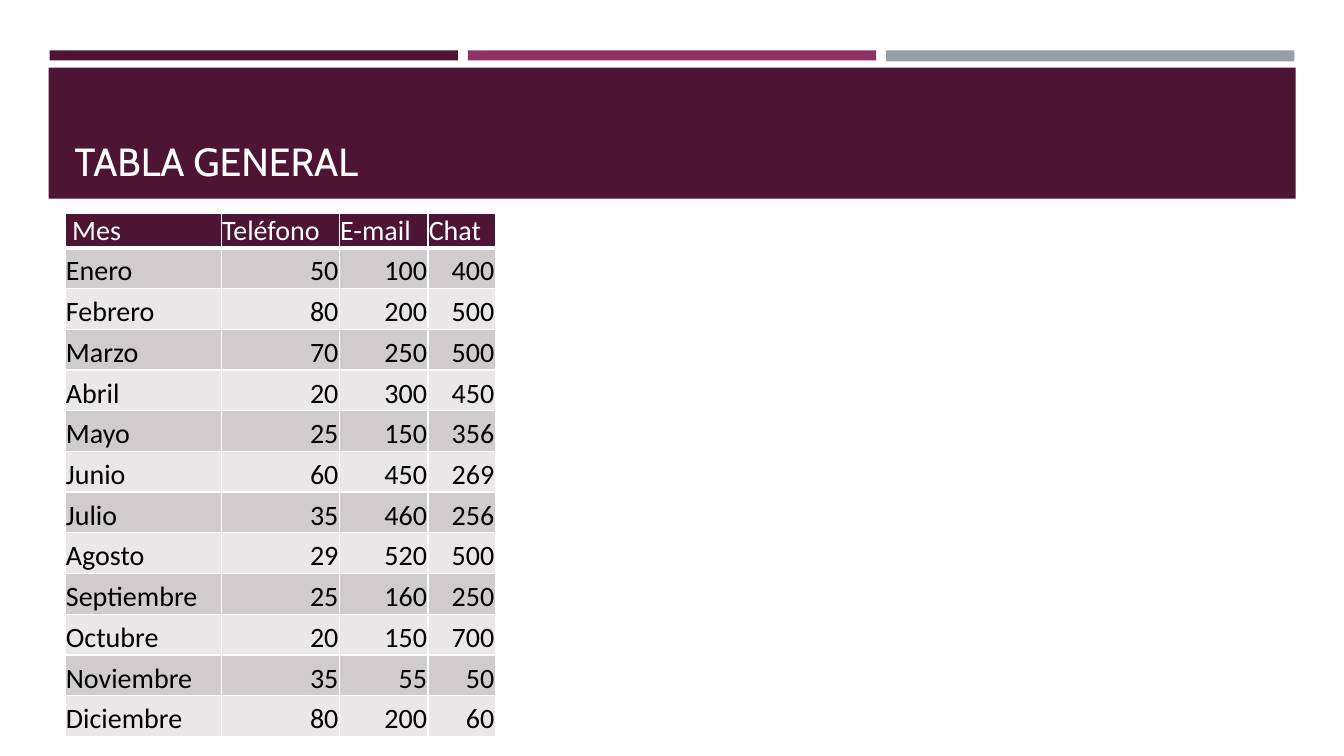
from dataclasses import dataclass
from typing import Any

from lxml import etree
from pptx import Presentation, util as u
from pptx.dml.color import RGBColor
from pptx.enum import shapes, text
from pptx.oxml import ns

EMU_PER_PX = 3810


@dataclass(frozen=True)
class Theme:
    plum: str = "4D1434"
    magenta: str = "903163"
    grey: str = "969FA7"
    odd_row: str = "D0CCCE"
    even_row: str = "E9E7E8"
    white: str = "FFFFFF"
    black: str = "000000"
    title_font: str = "Cabin"
    table_font: str = "Calibri"
    title_size: int = 28
    table_size: int = 20
    thin_border: int = 1
    thick_border: int = 3


@dataclass(frozen=True)
class Block:
    left: int
    top: int
    width: int
    height: int
    color: str


THEME = Theme()
BAR_LEFT, BAR_STEP = 118, 996
BARS = [
    Block(BAR_LEFT + i * BAR_STEP, 120, 972, height, color)
    for i, (color, height) in enumerate(
        [(THEME.plum, 24), (THEME.magenta, 24), (THEME.grey, 26)]
    )
]
TITLE_BAND = Block(116, 161, 2969, 312, THEME.plum)

TABLE_LEFT, TABLE_TOP = 155, 507
HEADER_HEIGHT, MONTH_HEIGHT = 83, 97
COLUMN_WIDTHS = [372, 281, 211, 160]
CONTACTS = [
    (" Mes", "Teléfono", "E-mail", "Chat"),
    ("Enero", 50, 100, 400),
    ("Febrero", 80, 200, 500),
    ("Marzo", 70, 250, 500),
    ("Abril", 20, 300, 450),
    ("Mayo", 25, 150, 356),
    ("Junio", 60, 450, 269),
    ("Julio", 35, 460, 256),
    ("Agosto", 29, 520, 500),
    ("Septiembre", 25, 160, 250),
    ("Octubre", 20, 150, 700),
    ("Noviembre", 35, 55, 50),
    ("Diciembre", 80, 200, 60),
]


def px(length: int) -> u.Emu:
    return u.Emu(length * EMU_PER_PX)


def set_format(target: Any, values: dict[str, Any]) -> None:
    for name, value in values.items():
        setattr(target, name, value)


def write(paragraph: Any, words: str, font: str, size: int, color: str) -> None:
    run = paragraph.add_run()
    run.text = words
    set_format(run.font, {"name": font, "size": u.Pt(size)})
    run.font.color.rgb = RGBColor.from_string(color)


def draw_block(slide: Any, block: Block) -> None:
    bar = slide.shapes.add_shape(
        shapes.MSO_SHAPE.RECTANGLE,
        px(block.left), px(block.top), px(block.width), px(block.height),
    )
    bar.shadow.inherit = False
    bar.fill.solid()
    bar.fill.fore_color.rgb = RGBColor.from_string(block.color)
    bar.line.fill.background()


def draw_title(slide: Any, words: str) -> None:
    title = slide.shapes.add_textbox(px(154), px(185), px(2894), px(266))
    set_format(title.text_frame, {
        "word_wrap": True,
        "vertical_anchor": text.MSO_ANCHOR.BOTTOM,
    })
    write(title.text_frame.paragraphs[0], words,
          THEME.title_font, THEME.title_size, THEME.white)


def draw_borders(cell: Any, widths: dict[str, int]) -> None:
    properties = cell._tc.get_or_add_tcPr()
    for side, width in widths.items():
        border = etree.SubElement(properties, ns.qn(f"a:ln{side}"), w=str(u.Pt(width)))
        fill = etree.SubElement(border, ns.qn("a:solidFill"))
        etree.SubElement(fill, ns.qn("a:srgbClr"), val=THEME.white)


def draw_cell(cell: Any, value: str | int, row: int) -> None:
    is_header = row == 0
    set_format(cell, {
        "margin_left": px(2),
        "margin_right": px(2),
        "margin_top": px(2),
        "margin_bottom": px(0),
        "vertical_anchor": text.MSO_ANCHOR.BOTTOM,
    })
    draw_borders(cell, {
        "L": THEME.thin_border,
        "R": THEME.thin_border,
        "T": THEME.thick_border if row == 1 else THEME.thin_border,
        "B": THEME.thick_border if is_header else THEME.thin_border,
    })
    band = THEME.odd_row if row % 2 else THEME.even_row
    cell.fill.solid()
    cell.fill.fore_color.rgb = RGBColor.from_string(THEME.plum if is_header else band)
    paragraph = cell.text_frame.paragraphs[0]
    if isinstance(value, int):
        paragraph.alignment = text.PP_ALIGN.RIGHT
    write(paragraph, str(value), THEME.table_font, THEME.table_size,
          THEME.white if is_header else THEME.black)


def draw_contacts(slide: Any) -> None:
    heights = [HEADER_HEIGHT] + [MONTH_HEIGHT] * (len(CONTACTS) - 1)
    contacts = slide.shapes.add_table(
        len(CONTACTS), len(COLUMN_WIDTHS), px(TABLE_LEFT), px(TABLE_TOP),
        px(sum(COLUMN_WIDTHS)), px(sum(heights)),
    ).table
    for column, width in zip(contacts.columns, COLUMN_WIDTHS):
        column.width = px(width)
    for row, (values, height) in enumerate(zip(CONTACTS, heights)):
        contacts.rows[row].height = px(height)
        for column, value in enumerate(values):
            draw_cell(contacts.cell(row, column), value, row)


def main() -> None:
    deck = Presentation()
    set_format(deck, {"slide_width": px(3200), "slide_height": px(1800)})
    slide = deck.slides.add_slide(deck.slide_layouts[6])
    for block in [*BARS, TITLE_BAND]:
        draw_block(slide, block)
    draw_title(slide, "TABLA GENERAL")
    draw_contacts(slide)
    deck.save("out.pptx")


if __name__ == "__main__":
    main()
